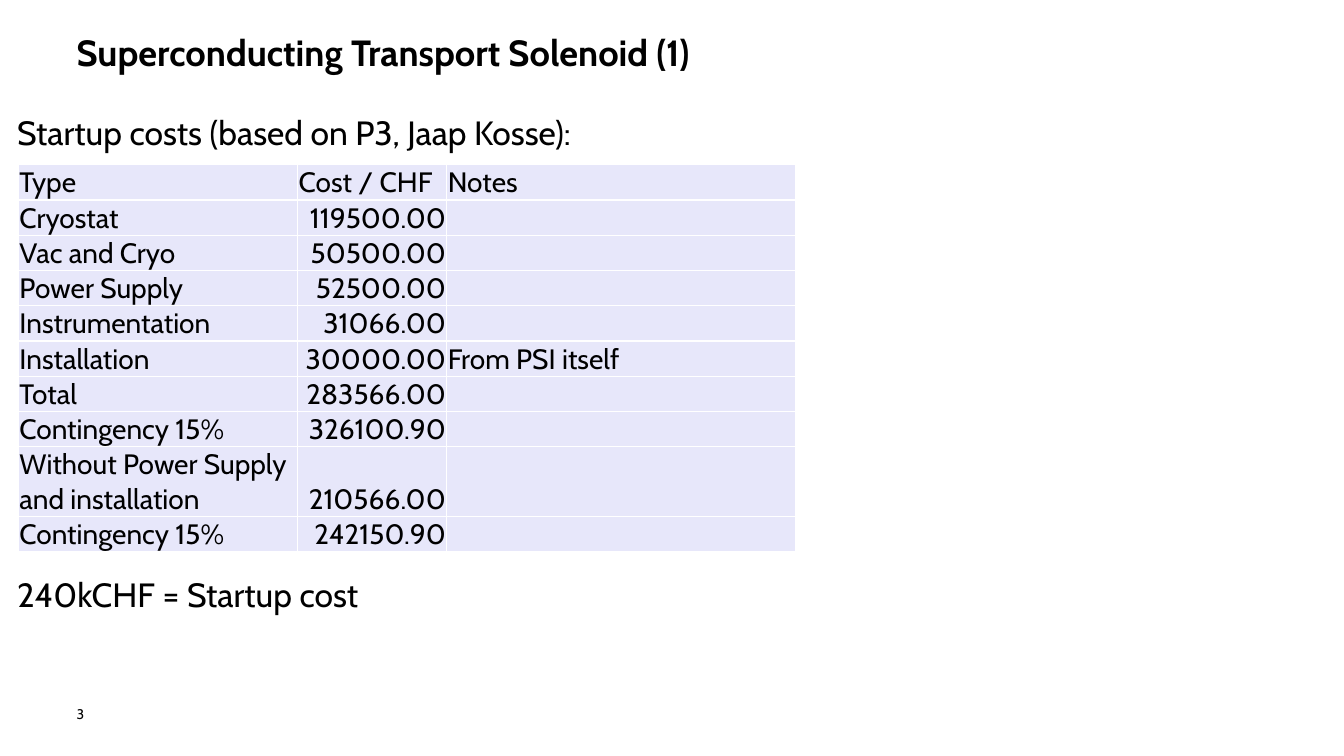
from lxml import etree
from pptx import Presentation
from pptx.dml.color import RGBColor
from pptx.enum.text import MSO_ANCHOR, PP_ALIGN
from pptx.oxml.ns import qn
from pptx.util import Pt

BOTTOM = MSO_ANCHOR.BOTTOM
LEFT, RIGHT = PP_ALIGN.LEFT, PP_ALIGN.RIGHT
FONT = "Cabin"
COLORS = {"text": "000000", "cell": "E7E7FA", "border": "FFFFFF"}

COLUMN_WIDTHS = [199.5, 106.5, 249]
LINE_HEIGHT = 24.3
CELL_MARGIN = 0.72
COSTS = [
    ("Type", "Cost / CHF", "Notes"),
    ("Cryostat", "119500.00", ""),
    ("Vac and Cryo", "50500.00", ""),
    ("Power Supply", "52500.00", ""),
    ("Instrumentation", "31066.00", ""),
    ("Installation", "30000.00", "From PSI itself"),
    ("Total", "283566.00", ""),
    ("Contingency 15%", "326100.90", ""),
    ("Without Power Supply and installation", "210566.00", ""),
    ("Contingency 15%", "242150.90", ""),
]
TWO_LINE_ROW = 8


def add_run(paragraph, text, size, bold=False):
    run = paragraph.add_run()
    run.text = text
    run.font.name = FONT
    run.font.size = Pt(size)
    run.font.bold = bold
    run.font.color.rgb = RGBColor.from_string(COLORS["text"])


def add_text(slide, text, left, top, width, height, size, bold=False):
    box = slide.shapes.add_textbox(Pt(left), Pt(top), Pt(width), Pt(height))
    frame = box.text_frame
    frame.word_wrap = True
    frame.margin_left = frame.margin_right = 0
    frame.margin_top = frame.margin_bottom = 0
    add_run(frame.paragraphs[0], text, size, bold)


def add_borders(cell):
    properties = cell._tc.get_or_add_tcPr()
    for side in ("a:lnL", "a:lnR", "a:lnT", "a:lnB"):
        line = etree.SubElement(properties, qn(side), w=str(Pt(1)))
        fill = etree.SubElement(line, qn("a:solidFill"))
        etree.SubElement(fill, qn("a:srgbClr"), val=COLORS["border"])


def fill_cell(cell, text, alignment):
    cell.margin_left = cell.margin_right = cell.margin_top = Pt(CELL_MARGIN)
    cell.margin_bottom = 0
    cell.vertical_anchor = BOTTOM
    add_borders(cell)
    cell.fill.solid()
    cell.fill.fore_color.rgb = RGBColor.from_string(COLORS["cell"])
    if text:
        paragraph = cell.text_frame.paragraphs[0]
        paragraph.alignment = alignment
        add_run(paragraph, text, 20)


def add_cost_table(slide, left, top):
    heights = [LINE_HEIGHT * (2 if row == TWO_LINE_ROW else 1) + 0.9
               for row in range(len(COSTS))]
    table = slide.shapes.add_table(
        len(COSTS), len(COLUMN_WIDTHS), Pt(left), Pt(top),
        Pt(sum(COLUMN_WIDTHS)), Pt(sum(heights))).table
    table.first_row = table.horz_banding = False
    for column, width in zip(table.columns, COLUMN_WIDTHS):
        column.width = Pt(width)
    for row, (cost, height) in enumerate(zip(COSTS, heights)):
        table.rows[row].height = Pt(height)
        for column, text in enumerate(cost):
            is_amount = row > 0 and column == 1
            fill_cell(table.cell(row, column), text, RIGHT if is_amount else LEFT)


def main():
    presentation = Presentation()
    presentation.slide_width, presentation.slide_height = Pt(960), Pt(540)
    slide = presentation.slides.add_slide(presentation.slide_layouts[6])
    add_text(slide, "Superconducting Transport Solenoid (1)",
             54.7, 21.6, 705.6, 64, 26, bold=True)
    add_text(slide, "Startup costs (based on P3, Jaap Kosse):", 12.2, 80, 828, 30, 24)
    add_cost_table(slide, 13.2, 117.6)
    add_text(slide, "240kCHF = Startup cost", 12.2, 410, 828, 30, 24)
    add_text(slide, "3", 54.7, 504, 55.4, 11.5, 10)
    presentation.save("out.pptx")


if __name__ == "__main__":
    main()
